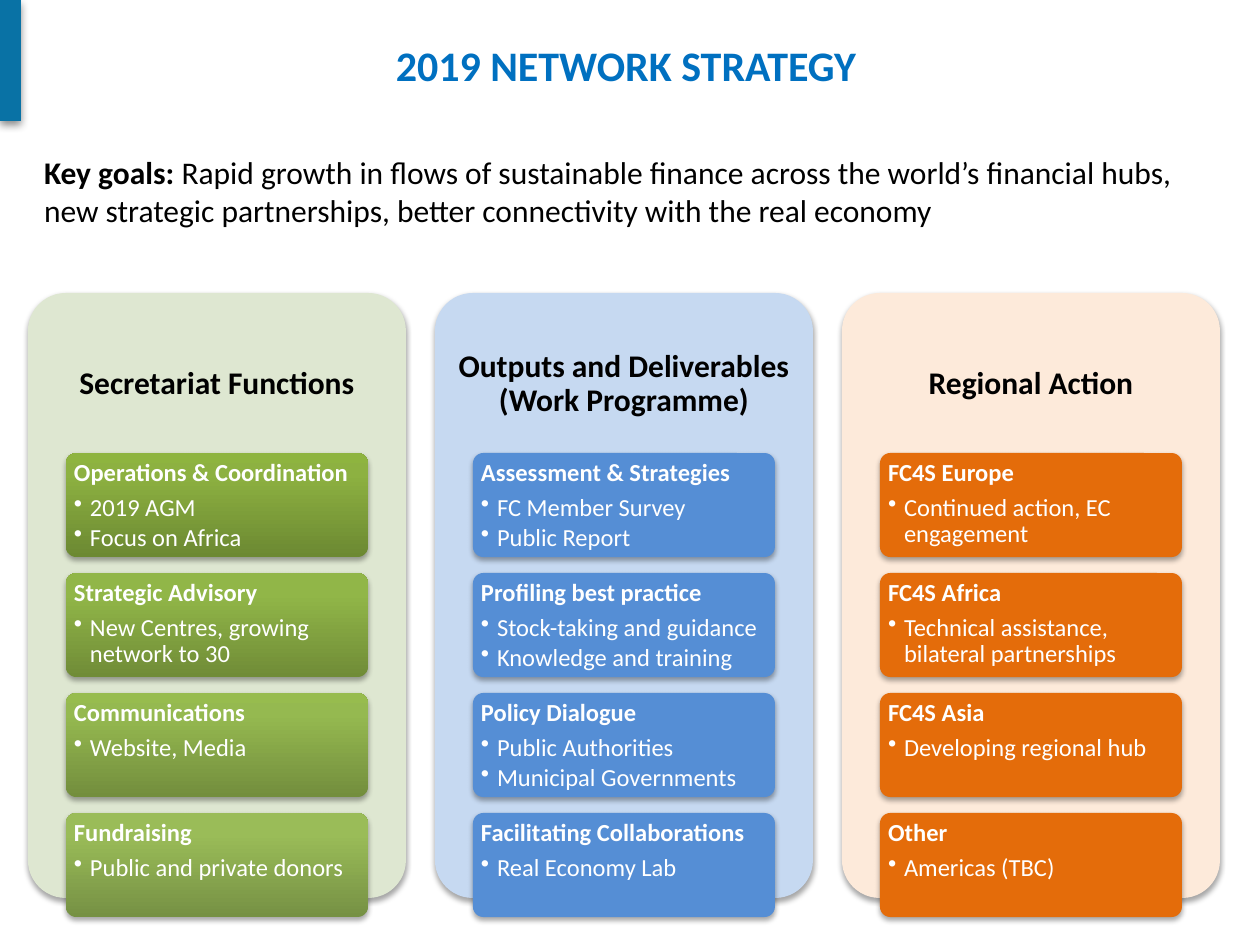
from copy import deepcopy
from dataclasses import dataclass

from lxml.etree import SubElement
from pptx import Presentation
from pptx.dml.color import RGBColor
from pptx.enum.shapes import MSO_SHAPE as Shape
from pptx.enum.text import MSO_ANCHOR as Anchor, MSO_AUTO_SIZE as AutoSize, PP_ALIGN as Align
from pptx.oxml.ns import qn
from pptx.util import Emu, Pt

EMU_PER_PX = 914400 / 126


@dataclass(frozen=True)
class Theme:
    font: str = "Calibri"
    title_size: int = 24
    heading_size: int = 18
    card_size: int = 14
    title: str = "0070C0"
    text: str = "000000"
    card_text: str = "FFFFFF"
    accent: str = "0972A5"
    green_panel: str = "DEE7D1"
    blue_panel: str = "C6D9F1"
    orange_panel: str = "FDEADA"
    blue_card: str = "558ED5"
    orange_card: str = "E46C0A"
    # Gradient stops at 0, 80 and 100 %, from the bottom of each card upwards
    green_cards: tuple = (
        ("6C8932", "8DB141", "8EB43F"),
        ("708C37", "91B648", "93B946"),
        ("738E3D", "95B950", "97BC4E"),
        ("769144", "9ABC58", "9BBF57"),
    )


THEME = Theme()

COLUMNS = [
    ("Secretariat Functions", THEME.green_panel, THEME.green_cards, [
        ("Operations & Coordination", ["2019 AGM", "Focus on Africa"]),
        ("Strategic Advisory", ["New Centres, growing network to 30"]),
        ("Communications", ["Website, Media"]),
        ("Fundraising", ["Public and private donors"]),
    ]),
    ("Outputs and Deliverables (Work Programme)", THEME.blue_panel, [THEME.blue_card] * 4, [
        ("Assessment & Strategies", ["FC Member Survey", "Public Report"]),
        ("Profiling best practice", ["Stock-taking and guidance", "Knowledge and training"]),
        ("Policy Dialogue", ["Public Authorities", "Municipal Governments"]),
        ("Facilitating Collaborations", ["Real Economy Lab"]),
    ]),
    ("Regional Action", THEME.orange_panel, [THEME.orange_card] * 4, [
        ("FC4S Europe", ["Continued action, EC engagement"]),
        ("FC4S Africa", ["Technical assistance, bilateral partnerships"]),
        ("FC4S Asia", ["Developing regional hub"]),
        ("Other", ["Americas (TBC)"]),
    ]),
]


def px(length):
    return Emu(round(length * EMU_PER_PX))


def place(box):
    return [px(length) for length in box]


def style_font(font, size, color, bold=False):
    font.name = THEME.font
    font.size = Pt(size)
    font.bold = bold
    font.color.rgb = RGBColor.from_string(color)


def set_frame(frame, horizontal, vertical, anchor=Anchor.TOP):
    frame.word_wrap = True
    frame.vertical_anchor = anchor
    frame.margin_left = frame.margin_right = px(horizontal)
    frame.margin_top = frame.margin_bottom = px(vertical)


def set_fill(shape, colors):
    """Fill with one colour, or with a vertical gradient of three."""
    fill = shape.fill
    if isinstance(colors, str):
        fill.solid()
        fill.fore_color.rgb = RGBColor.from_string(colors)
        return
    fill.gradient()
    fill.gradient_angle = 90
    stop_list = shape._element.spPr.find(".//" + qn("a:gsLst"))
    stop_list.append(deepcopy(stop_list[-1]))
    for stop, position, color in zip(fill.gradient_stops, (0, 0.8, 1), colors):
        stop.position = position
        stop.color.rgb = RGBColor.from_string(color)


def add_shadow(shape, opacity, blur, distance):
    shape.shadow.inherit = False
    effects = shape._element.spPr.find(qn("a:effectLst"))
    shadow = SubElement(effects, qn("a:outerShdw"), blurRad=str(Pt(blur)),
                        dist=str(Pt(distance)), dir="5400000", rotWithShape="0")
    color = SubElement(shadow, qn("a:srgbClr"), val="000000")
    SubElement(color, qn("a:alpha"), val=str(opacity * 1000))


def add_block(slide, kind, box, colors, shadow=(35, 3.1, 1.8)):
    shape = slide.shapes.add_shape(kind, *place(box))
    if kind == Shape.ROUNDED_RECTANGLE:
        shape.adjustments[0] = 0.1
    set_fill(shape, colors)
    shape.line.fill.background()
    add_shadow(shape, *shadow)
    return shape


def add_bullet(paragraph):
    properties = paragraph._p.get_or_add_pPr()
    properties.set("marL", str(px(16)))
    properties.set("indent", str(px(-16)))
    SubElement(properties, qn("a:buChar"), char="•")


def add_card(slide, box, colors, heading, items):
    card = add_block(slide, Shape.ROUNDED_RECTANGLE, box, colors)
    frame = card.text_frame
    set_frame(frame, 5, 4)
    for index, text in enumerate([heading, *items]):
        is_heading = index == 0
        paragraph = frame.paragraphs[0] if is_heading else frame.add_paragraph()
        paragraph.text = text
        paragraph.alignment = Align.LEFT
        paragraph.line_spacing = 0.9
        paragraph.space_after = Pt(4.9 if is_heading else 2.1)
        if not is_heading:
            paragraph.level = 1
            add_bullet(paragraph)
        style_font(paragraph.font, THEME.card_size, THEME.card_text, is_heading)


def add_column(slide, box, heading, panel_color, card_colors, cards):
    left, top, width, height = box
    add_block(slide, Shape.ROUNDED_RECTANGLE, box, panel_color)
    label = slide.shapes.add_textbox(*place((left, top, width, 182)))
    set_frame(label.text_frame, 9, 9, Anchor.MIDDLE)
    paragraph = label.text_frame.paragraphs[0]
    paragraph.text = heading
    paragraph.alignment = Align.CENTER
    paragraph.line_spacing = 0.9
    style_font(paragraph.font, THEME.heading_size, THEME.text, True)

    margin, card_height, gap = 38, 104, 16
    for row, (colors, (card_heading, items)) in enumerate(zip(card_colors, cards)):
        card_top = top + 160 + row * (card_height + gap)
        card_box = (left + margin, card_top, width - 2 * margin, card_height)
        add_card(slide, card_box, colors, card_heading, items)


def add_title(slide, box):
    title = slide.shapes.title
    title.left, title.top, title.width, title.height = place(box)
    frame = title.text_frame
    frame.auto_size = AutoSize.NONE
    set_frame(frame, 13, 6)
    paragraph = frame.paragraphs[0]
    paragraph.text = "2019 NETWORK STRATEGY"
    paragraph.alignment = Align.CENTER
    style_font(paragraph.font, THEME.title_size, THEME.title, True)


def add_goals(slide, box):
    frame = slide.shapes.add_textbox(*place(box)).text_frame
    set_frame(frame, 13, 6)
    paragraph = frame.paragraphs[0]
    style_font(paragraph.font, THEME.heading_size, THEME.text)
    for text, bold in (
        ("Key goals: ", True),
        ("Rapid growth in flows of sustainable finance across the world’s financial hubs, "
         "new strategic partnerships, better connectivity with the real economy", False),
    ):
        run = paragraph.add_run()
        run.text = text
        style_font(run.font, THEME.heading_size, THEME.text, bold)


def main():
    presentation = Presentation()
    presentation.slide_width, presentation.slide_height = px(1260), px(945)
    slide = presentation.slides.add_slide(presentation.slide_layouts[5])
    add_block(slide, Shape.RECTANGLE, (0, 0, 21, 121), THEME.accent, (45, 5, 2.4))
    add_title(slide, (165, 33, 922, 57))
    for index, column in enumerate(COLUMNS):
        add_column(slide, (28 + index * 407, 293, 378, 605), *column)
    add_goals(slide, (31, 147, 1192, 89))
    presentation.save("out.pptx")


if __name__ == "__main__":
    main()
